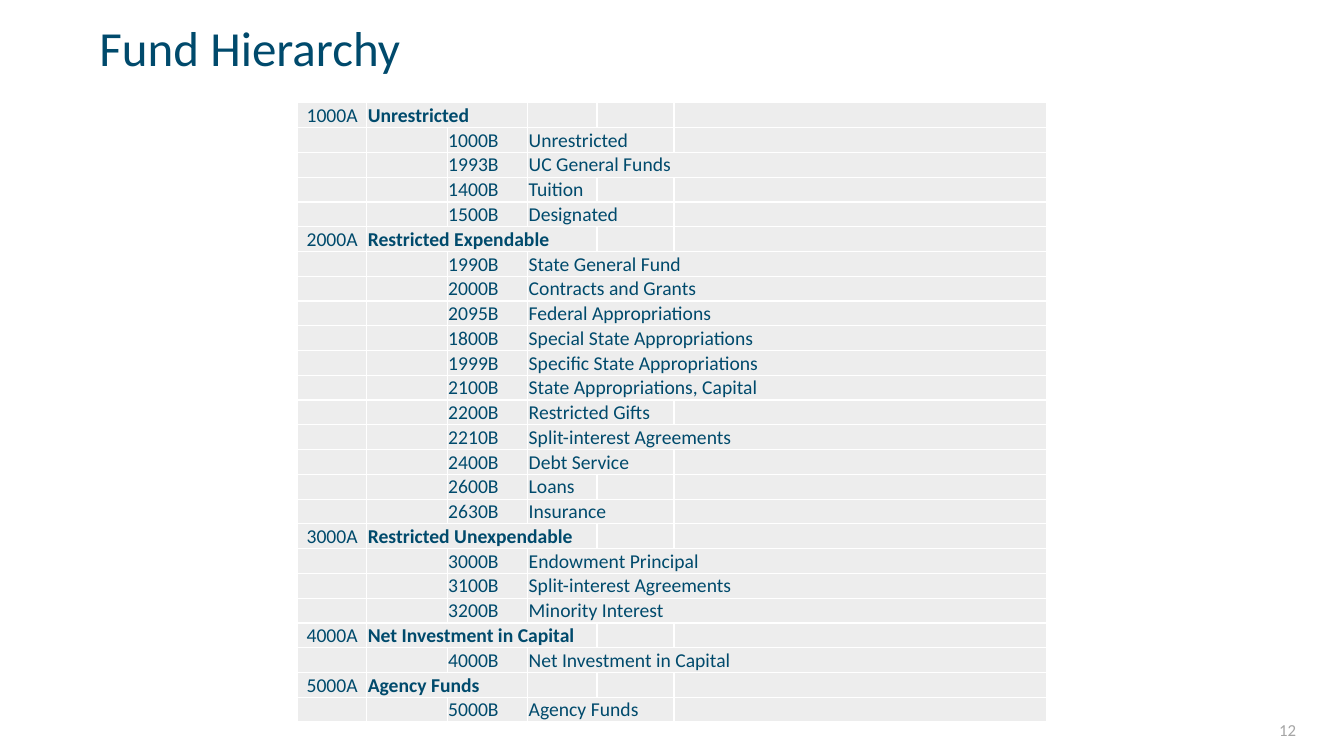
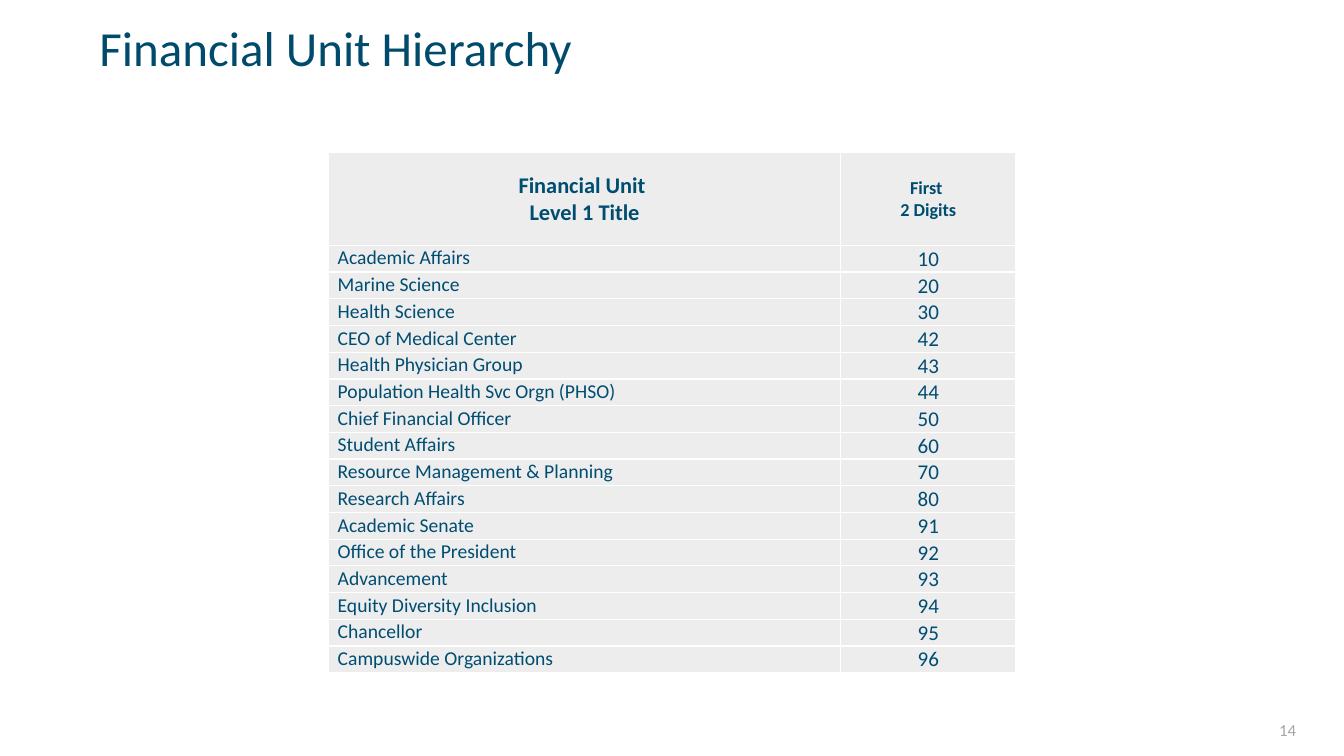
from dataclasses import dataclass, field
from typing import Any

import pptx
import pptx.dml.color
import pptx.enum.text
import pptx.oxml
import pptx.oxml.ns
import pptx.util

Pt = pptx.util.Pt
ALIGN = pptx.enum.text.PP_ALIGN
ANCHOR = pptx.enum.text.MSO_ANCHOR

# Shared look
FACE = "Calibri"
NAVY = "004A6C"
BLUE = "004D72"
GRAY = "A5A5A5"
PALE = "EDEDED"
WHITE = "FFFFFF"
TITLE = {"size": Pt(35), "bold": False}
FOOTER = {"size": Pt(12), "bold": False}
BODY = {"size": Pt(14), "bold": False}
STRONG = {"size": Pt(14), "bold": True}
DIGIT = {"size": Pt(15), "bold": False}
HEAD = {"size": Pt(16), "bold": True}
SMALL = {"size": Pt(13), "bold": True}


@dataclass
class Item:
    """Text of one table cell, which may span several columns."""
    row: int
    col: int
    text: str
    style: dict[str, Any] = field(default_factory=lambda: BODY)
    span: int = 1
    align: Any = ALIGN.LEFT
    anchor: Any = ANCHOR.TOP
    left: float = 0.7


@dataclass
class Grid:
    x: float
    y: float
    cols: list[float]
    rows: list[float]
    color: str
    items: list[Item]


def paint(target: Any, color: str) -> None:
    target.rgb = pptx.dml.color.RGBColor.from_string(color)


def write(para: Any, text: str, style: dict[str, Any], color: str, align: Any) -> None:
    para.text = text
    para.alignment = align
    for run in para.runs:
        for name, value in {"name": FACE, **style}.items():
            setattr(run.font, name, value)
        paint(run.font.color, color)


def label(slide: Any, text: str, box: tuple[float, ...], style: dict[str, Any],
          color: str, align: Any, anchor: Any, pitch: float) -> None:
    frame = slide.shapes.add_textbox(*map(Pt, box)).text_frame
    frame.word_wrap = True
    frame.vertical_anchor = anchor
    para = frame.paragraphs[0]
    write(para, text, style, color, align)
    para.line_spacing = pitch


# Tables
def dress(cell: Any) -> None:
    """Give a cell white borders, a pale fill, thin margins and a small empty line."""
    props = cell._tc.get_or_add_tcPr()
    space = pptx.oxml.ns.nsdecls("a")
    for side in "LRTB":
        props.append(pptx.oxml.parse_xml(
            f'<a:ln{side} {space} w="{Pt(1)}"><a:solidFill>'
            f'<a:srgbClr val="{WHITE}"/></a:solidFill></a:ln{side}>'))
    cell.fill.solid()
    paint(cell.fill.fore_color, PALE)
    for edge, size in {"left": 0.7, "right": 0.7, "top": 0.7, "bottom": 0}.items():
        setattr(cell, f"margin_{edge}", Pt(size))
    cell.text_frame.paragraphs[0]._p.append(
        pptx.oxml.parse_xml(f'<a:endParaRPr {space} sz="1000"/>'))


def draw(slide: Any, grid: Grid) -> None:
    table = slide.shapes.add_table(
        len(grid.rows), len(grid.cols), Pt(grid.x), Pt(grid.y),
        Pt(sum(grid.cols)), Pt(sum(grid.rows))).table
    table.first_row = table.horz_banding = False
    for col, width in zip(table.columns, grid.cols):
        col.width = Pt(width)
    for row, height in zip(table.rows, grid.rows):
        row.height = Pt(height)
    for cell in table.iter_cells():
        dress(cell)
    for item in grid.items:
        cell = table.cell(item.row, item.col)
        if item.span > 1:
            cell.merge(table.cell(item.row, item.col + item.span - 1))
        cell.margin_left = Pt(item.left)
        cell.vertical_anchor = item.anchor
        write(cell.text_frame.paragraphs[0], item.text, item.style, grid.color, item.align)


# Fund rows: code, name, columns the name spans
FUNDS = [
    ("1000A", "Unrestricted", 2),
    ("1000B", "Unrestricted", 2),
    ("1993B", "UC General Funds", 3),
    ("1400B", "Tuition", 1),
    ("1500B", "Designated", 2),
    ("2000A", "Restricted Expendable", 3),
    ("1990B", "State General Fund", 3),
    ("2000B", "Contracts and Grants", 3),
    ("2095B", "Federal Appropriations", 3),
    ("1800B", "Special State Appropriations", 3),
    ("1999B", "Specific State Appropriations", 3),
    ("2100B", "State Appropriations, Capital", 3),
    ("2200B", "Restricted Gifts", 2),
    ("2210B", "Split-interest Agreements", 3),
    ("2400B", "Debt Service", 2),
    ("2600B", "Loans", 1),
    ("2630B", "Insurance", 2),
    ("3000A", "Restricted Unexpendable", 3),
    ("3000B", "Endowment Principal", 3),
    ("3100B", "Split-interest Agreements", 3),
    ("3200B", "Minority Interest", 3),
    ("4000A", "Net Investment in Capital", 3),
    ("4000B", "Net Investment in Capital", 3),
    ("5000A", "Agency Funds", 2),
    ("5000B", "Agency Funds", 2),
]

# Unit rows: name, first two digits
UNITS = [
    ("Academic Affairs", "10"),
    ("Marine Science", "20"),
    ("Health Science", "30"),
    ("CEO of Medical Center", "42"),
    ("Health Physician Group", "43"),
    ("Population Health Svc Orgn (PHSO)", "44"),
    ("Chief Financial Officer", "50"),
    ("Student Affairs", "60"),
    ("Resource Management & Planning", "70"),
    ("Research Affairs", "80"),
    ("Academic Senate", "91"),
    ("Office of the President", "92"),
    ("Advancement", "93"),
    ("Equity Diversity Inclusion", "94"),
    ("Chancellor", "95"),
    ("Campuswide Organizations", "96"),
]


def funds() -> Grid:
    items = []
    for row, (code, name, span) in enumerate(FUNDS):
        top = code.endswith("A")
        col = 0 if top else 2
        items += [
            Item(row, col, code, align=ALIGN.CENTER if top else ALIGN.LEFT,
                 anchor=ANCHOR.BOTTOM),
            Item(row, col + 1, name, STRONG if top else BODY, span, anchor=ANCHOR.BOTTOM),
        ]
    return Grid(212.5, 73.5, [49.5, 57.5, 57.5, 49.5, 55, 266],
                [17.7] * len(FUNDS), NAVY, items)


def units() -> Grid:
    mid = {"align": ALIGN.CENTER, "anchor": ANCHOR.MIDDLE}
    items = [Item(0, 0, "Financial Unit \nLevel 1 Title", HEAD, **mid),
             Item(0, 1, "First \n2 Digits", SMALL, **mid)]
    for row, (name, digits) in enumerate(UNITS, 1):
        items += [Item(row, 0, name, left=6.5),
                  Item(row, 1, digits, DIGIT, align=ALIGN.CENTER)]
    return Grid(234.7, 109, [365.7, 125.3], [66.3] + [19.1] * len(UNITS), BLUE, items)


# Slides
def build(deck: Any, title: str, page: str, grid: Grid) -> None:
    slide = deck.slides.add_slide(deck.slide_layouts[6])
    label(slide, title, (64, 13.7, 496, 59), TITLE, NAVY, ALIGN.LEFT, ANCHOR.TOP, 0.9)
    draw(slide, grid)
    label(slide, page, (717, 507, 216, 28.8), FOOTER, GRAY, ALIGN.RIGHT, ANCHOR.MIDDLE, 1.0)


def main() -> None:
    deck = pptx.Presentation()
    deck.slide_width, deck.slide_height = Pt(960), Pt(540)
    build(deck, "Fund Hierarchy", "12", funds())
    build(deck, "Financial Unit Hierarchy", "14", units())
    deck.save("out.pptx")


if __name__ == "__main__":
    main()
